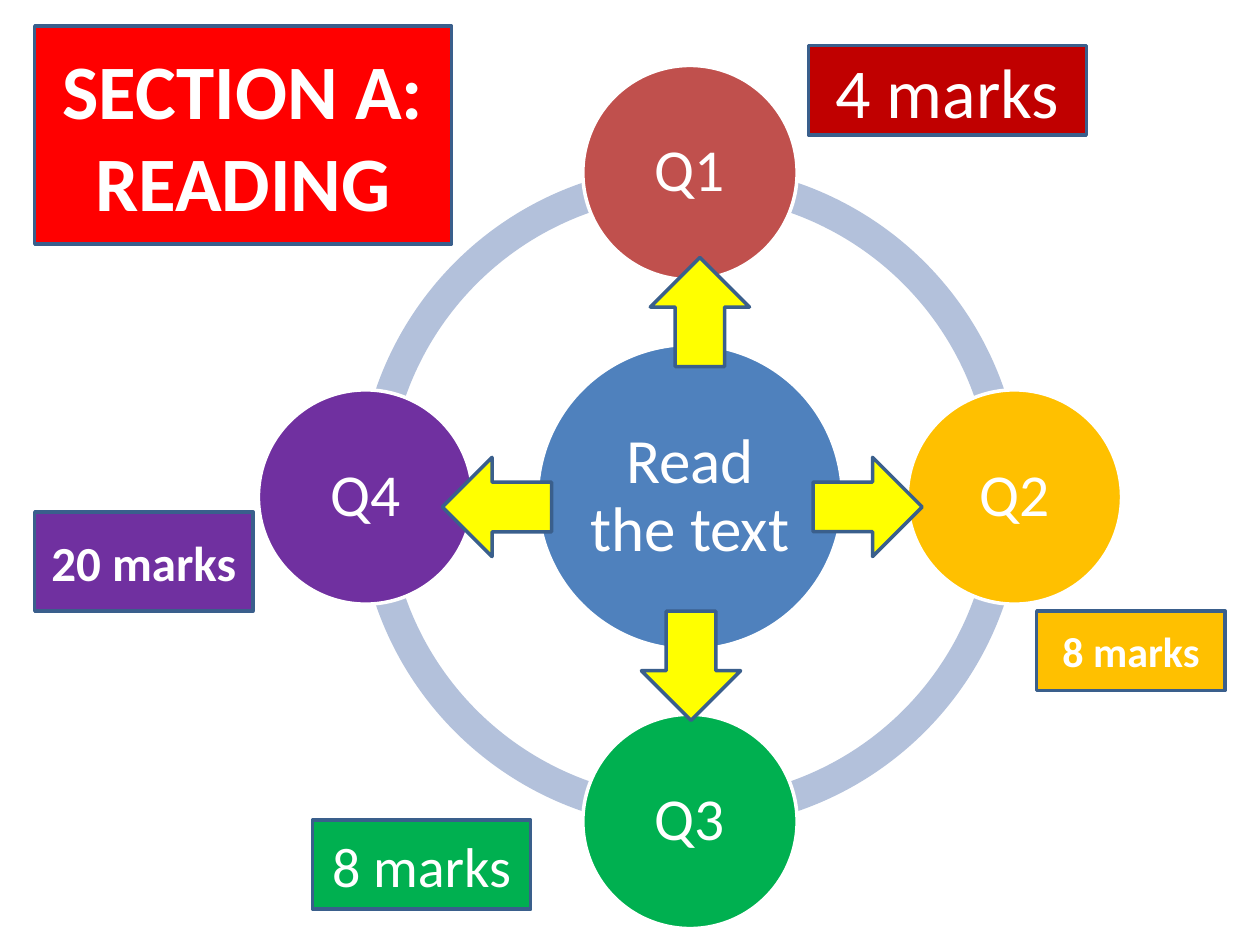
from math import cos, radians, sin

from pptx import Presentation
from pptx.dml.color import RGBColor
from pptx.enum.shapes import MSO_SHAPE
from pptx.enum.text import MSO_ANCHOR, MSO_AUTO_SIZE, PP_ALIGN
from pptx.util import Cm, Pt

WHITE = RGBColor(0xFF, 0xFF, 0xFF)
EDGE = RGBColor(0x3A, 0x5F, 0x8C)
RING = RGBColor(0xB3, 0xC1, 0xDB)
BLUE = RGBColor(0x4F, 0x81, 0xBD)
BRICK = RGBColor(0xC0, 0x50, 0x4D)
DARK = RGBColor(0xC0, 0x00, 0x00)
RED = RGBColor(0xFF, 0x00, 0x00)
GOLD = RGBColor(0xFF, 0xC0, 0x00)
GREEN = RGBColor(0x00, 0xB0, 0x50)
PURPLE = RGBColor(0x70, 0x30, 0xA0)
YELLOW = RGBColor(0xFF, 0xFF, 0x00)

MID_X, MID_Y = 13.91, 10.02
RING_SIZE, CORE_SIZE, NODE_SIZE, ORBIT = 13.39, 6.15, 4.32, 6.54
ARROW_W, ARROW_H = 2, 2.2

NODES = [("Q1", BRICK), ("Q2", GOLD), ("Q3", GREEN), ("Q4", PURPLE)]
MARKS = [
    ("4 marks", 16.3, 0.92, 5.6, 1.8, DARK, 40, False),
    ("8 marks", 20.9, 12.32, 3.8, 1.6, GOLD, 24, True),
    ("8 marks", 6.3, 16.53, 4.4, 1.8, GREEN, 32, False),
    ("20 marks", 0.7, 10.32, 4.4, 2, PURPLE, 28, True),
]
ARROWS = [(14.11, 6.29), (17.49, 10.22), (13.93, 13.42), (10.02, 10.22)]


def apply(item, form):
    for key, value in form.items():
        setattr(item, key, value)


def paint(shape, fill, edge=None):
    shape.fill.solid()
    shape.fill.fore_color.rgb = fill
    if edge is None:
        shape.line.fill.background()
    else:
        shape.line.color.rgb = edge
        shape.line.width = Pt(2)


def add_form(slide, kind, x, y, w, h, fill, edge=None):
    shape = slide.shapes.add_shape(kind, Cm(x), Cm(y), Cm(w), Cm(h))
    shape.shadow.inherit = False
    paint(shape, fill, edge)
    return shape


def write(shape, text, size, bold=False, frame=None, para=None):
    box = shape.text_frame
    apply(box, {
        "text": text,
        "word_wrap": True,
        "auto_size": MSO_AUTO_SIZE.NONE,
        "vertical_anchor": MSO_ANCHOR.MIDDLE,
        **(frame or {}),
    })
    line = box.paragraphs[0]
    apply(line, {"alignment": PP_ALIGN.CENTER, **(para or {})})
    font = line.runs[0].font
    apply(font, {"name": "Calibri", "size": Pt(size), "bold": bold})
    font.color.rgb = WHITE


def add_title(slide):
    title = slide.shapes.title
    apply(title, {
        "left": Cm(0.7), "top": Cm(0.52),
        "width": Cm(8.4), "height": Cm(4.4),
    })
    paint(title, RED, EDGE)
    write(title, "SECTION A: READING", 44, True)


def add_ring(slide):
    half = RING_SIZE / 2
    for turn in range(4):
        arc = add_form(slide, MSO_SHAPE.BLOCK_ARC, MID_X - half,
                       MID_Y - half, RING_SIZE, RING_SIZE, RING)
        bounds = (54 * turn, 54 * (turn + 1) % 216, 0.046)
        for i, value in enumerate(bounds):
            arc.adjustments[i] = value


def add_disc(slide, text, x, y, width, fill, size):
    disc = add_form(slide, MSO_SHAPE.OVAL, x - width / 2, y - width / 2,
                    width, width, fill, WHITE)
    sides = ("left", "top", "right", "bottom")
    frame = {f"margin_{side}": Cm(0.12) for side in sides}
    write(disc, text, size, frame=frame, para={"line_spacing": 0.9})


def add_nodes(slide):
    for turn, (text, fill) in enumerate(NODES):
        angle = radians(90 * turn)
        add_disc(slide, text, MID_X + ORBIT * sin(angle),
                 MID_Y - ORBIT * cos(angle), NODE_SIZE, fill, 34)


def add_marks(slide):
    for text, x, y, w, h, fill, size, bold in MARKS:
        label = add_form(slide, MSO_SHAPE.RECTANGLE, x, y, w, h, fill, EDGE)
        write(label, text, size, bold)


def add_arrows(slide):
    for turn, (x, y) in enumerate(ARROWS):
        arrow = add_form(slide, MSO_SHAPE.UP_ARROW, x - ARROW_W / 2,
                         y - ARROW_H / 2, ARROW_W, ARROW_H, YELLOW, EDGE)
        arrow.rotation = 90 * turn


def main():
    deck = Presentation()
    apply(deck, {"slide_width": Cm(25.4), "slide_height": Cm(19.05)})
    slide = deck.slides.add_slide(deck.slide_layouts[5])
    add_title(slide)
    add_ring(slide)
    add_disc(slide, "Read the text", MID_X, MID_Y, CORE_SIZE, BLUE, 36)
    add_nodes(slide)
    add_marks(slide)
    add_arrows(slide)
    deck.save("out.pptx")


if __name__ == "__main__":
    main()
